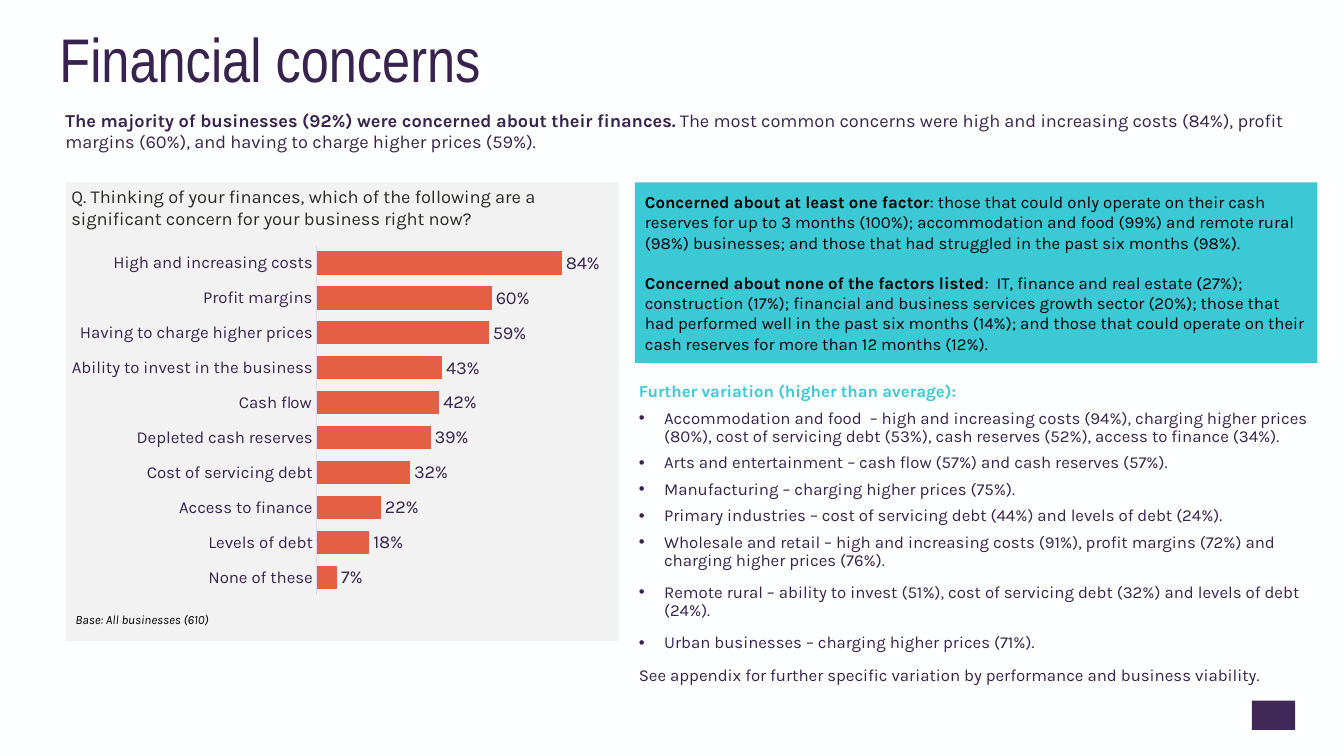
from lxml import etree
from pptx import Presentation
from pptx.chart.data import CategoryChartData
from pptx.dml.color import RGBColor
from pptx.enum import chart as charts, shapes, text
from pptx.oxml import parse_xml
from pptx.oxml.ns import nsdecls, qn
from pptx.util import Pt

COLORS = {
    "background": "FEFFFF", "plum": "38234E", "marker": "402957",
    "panel": "F2F2F2", "question": "292926", "black": "000000",
    "teal": "3BC9D5", "bar": "E45F46", "axis": "E1D6ED",
}
TITLE = "Financial concerns"
SUMMARY = [
    ("The majority of businesses (92%) were concerned about their finances. ", True),
    ("The most common concerns were high and increasing costs (84%), profit margins (60%), "
     "and having to charge higher prices (59%).", False),
]
QUESTION = ("Q. Thinking of your finances, which of the following are a significant "
            "concern for your business right now?")
BASE = "Base: All businesses (610)"
CONCERNS = {
    "High and increasing costs": 0.84,
    "Profit margins": 0.60,
    "Having to charge higher prices": 0.59,
    "Ability to invest in the business": 0.43,
    "Cash flow": 0.42,
    "Depleted cash reserves": 0.39,
    "Cost of servicing debt": 0.32,
    "Access to finance": 0.22,
    "Levels of debt": 0.18,
    "None of these": 0.07,
}
CALLOUT = [
    [("Concerned about at least one factor", True),
     (": those that could only operate on their cash reserves for up to 3 months (100%); "
      "accommodation and food (99%) and remote rural (98%) businesses; and those that had "
      "struggled in the past six months (98%).", False)],
    [("Concerned about none of the factors listed", True),
     (":  IT, finance and real estate (27%); construction (17%); financial and business "
      "services growth sector (20%); those that had performed well in the past six months "
      "(14%); and those that could operate on their cash reserves for more than 12 months "
      "(12%).", False)],
]
VARIATION_HEADING = "Further variation (higher than average):"
VARIATIONS = [  # text, space before
    ("Accommodation and food  – high and increasing costs (94%), charging higher prices "
     "(80%), cost of servicing debt (53%), cash reserves (52%), access to finance (34%).", 6),
    ("Arts and entertainment – cash flow (57%) and cash reserves (57%).", 6),
    ("Manufacturing – charging higher prices (75%).", 6),
    ("Primary industries – cost of servicing debt (44%) and levels of debt (24%).", 6),
    ("Wholesale and retail – high and increasing costs (91%), profit margins (72%) and "
     "charging higher prices (76%).", 6),
    ("Remote rural – ability to invest (51%), cost of servicing debt (32%) and levels of "
     "debt (24%).", 10),
    ("Urban businesses – charging higher prices (71%).", 10),
]
APPENDIX = "See appendix for further specific variation by performance and business viability."

# left, top, width, height in points
TITLE_AREA = (35.3, 10.1, 828, 69.1)
SUMMARY_AREA = (39.6, 74.2, 913.7, 38.9)
PANEL_AREA = (46.8, 130.3, 395.3, 327.6)
QUESTION_AREA = (43.9, 135.4, 396, 25.2)
CHART_AREA = (50.4, 175, 378, 260)
BASE_AREA = (46.8, 434.9, 337, 15.1)
CALLOUT_AREA = (453.6, 130.3, 487.4, 128.9)
VARIATION_AREA = (449.3, 270, 504, 258.5)
MARKER_AREA = (894.2, 500.4, 31, 20.9)
PLOT_LAYOUT = {"x": 0.467, "y": 0, "w": 0.498, "h": 0.961}


def color(name):
    return RGBColor.from_string(COLORS[name])


def set_font(font, size, color_name, face="Karla"):
    font.name = face
    font.size = Pt(size)
    font.color.rgb = color(color_name)


def add_rectangle(page, area, fill):
    box = page.shapes.add_shape(shapes.MSO_SHAPE.RECTANGLE, *map(Pt, area))
    box.shadow.inherit = False
    box.fill.solid()
    box.fill.fore_color.rgb = color(fill)
    box.line.fill.background()
    return box


def add_text_box(page, area, anchor=text.MSO_ANCHOR.TOP):
    frame = page.shapes.add_textbox(*map(Pt, area)).text_frame
    frame.word_wrap = True
    frame.vertical_anchor = anchor
    return frame


def write(frame, spans, size, color_name, before=0, spacing=None, bullet=False):
    """Fill the frame's empty first paragraph, or append one; spans are (text, bold)."""
    para = frame.paragraphs[0]
    if para.runs:
        para = frame.add_paragraph()
    para.alignment = text.PP_ALIGN.LEFT
    if before:
        para.space_before = Pt(before)
    if spacing:
        para.line_spacing = spacing
    if bullet:
        properties = para._p.get_or_add_pPr()
        properties.set("marL", str(Pt(18)))
        properties.set("indent", str(Pt(-18)))
        etree.SubElement(properties, qn("a:buFont")).set("typeface", "Arial")
        etree.SubElement(properties, qn("a:buChar")).set("char", "•")
    set_font(para.font, size, color_name)
    for words, bold in spans:
        span = para.add_run()
        span.text = words
        span.font.bold = bold
    return para


def add_concern_chart(page):
    data = CategoryChartData(number_format="0%")
    data.categories = list(CONCERNS)
    data.add_series("Series 1", list(CONCERNS.values()))
    chart = page.shapes.add_chart(
        charts.XL_CHART_TYPE.BAR_CLUSTERED, *map(Pt, CHART_AREA), data).chart
    chart.has_legend = False
    chart.has_title = False
    set_font(chart.font, 13, "plum", "Calibri")

    categories = chart.category_axis
    categories.reverse_order = True
    categories.major_tick_mark = charts.XL_TICK_MARK.NONE
    set_font(categories.tick_labels.font, 12, "plum")
    categories.format.line.color.rgb = color("axis")
    categories.format.line.width = Pt(0.75)
    values = chart.value_axis
    values.visible = False
    values.has_major_gridlines = False
    values.minimum_scale, values.maximum_scale = 0, 0.9

    plot = chart.plots[0]
    plot.gap_width = 50
    plot.vary_by_categories = False
    bars = plot.series[0].format.fill
    bars.solid()
    bars.fore_color.rgb = color("bar")
    plot.has_data_labels = True
    labels = plot.data_labels
    labels.show_value = True
    labels.position = charts.XL_LABEL_POSITION.OUTSIDE_END
    labels.number_format = "0%"
    labels.number_format_is_linked = False
    set_font(labels.font, 13, "plum")

    plot_area = chart._chartSpace.chart.plotArea
    for layout in plot_area.findall(qn("c:layout")):
        plot_area.remove(layout)
    modes = '<c:layoutTarget val="inner"/><c:xMode val="edge"/><c:yMode val="edge"/>'
    sizes = "".join(f'<c:{key} val="{part}"/>' for key, part in PLOT_LAYOUT.items())
    plot_area.insert(0, parse_xml(
        f'<c:layout {nsdecls("c")}><c:manualLayout>{modes}{sizes}</c:manualLayout></c:layout>'))


def main():
    deck = Presentation()
    deck.slide_width, deck.slide_height = Pt(960), Pt(540)
    page = deck.slides.add_slide(deck.slide_layouts[5])
    page.background.fill.solid()
    page.background.fill.fore_color.rgb = color("background")
    middle = text.MSO_ANCHOR.MIDDLE

    add_rectangle(page, MARKER_AREA, "marker")
    title = page.shapes.title
    title.left, title.top, title.width, title.height = map(Pt, TITLE_AREA)
    title.text_frame.text = TITLE
    title.text_frame.vertical_anchor = middle
    heading = title.text_frame.paragraphs[0]
    heading.alignment = text.PP_ALIGN.LEFT
    heading.line_spacing = 0.9
    set_font(heading.font, 44, "plum", "Arial Narrow")
    write(add_text_box(page, SUMMARY_AREA), SUMMARY, 13, "plum")

    add_rectangle(page, PANEL_AREA, "panel")
    write(add_text_box(page, QUESTION_AREA, middle), [(QUESTION, False)], 13, "question")
    add_concern_chart(page)
    base = write(add_text_box(page, BASE_AREA, middle), [(BASE, False)], 9, "black")
    base.font.italic = True

    callout = add_rectangle(page, CALLOUT_AREA, "teal").text_frame
    callout.word_wrap = True
    callout.vertical_anchor = middle
    for index, spans in enumerate(CALLOUT):
        write(callout, spans, 12, "black", before=14.5 * index)

    variation = add_text_box(page, VARIATION_AREA)
    write(variation, [(VARIATION_HEADING, True)], 12, "teal", spacing=0.9)
    for words, before in VARIATIONS:
        write(variation, [(words, False)], 12, "plum", before, 0.9, bullet=True)
    write(variation, [(APPENDIX, False)], 12, "plum", 10, 0.9)

    deck.save("out.pptx")


if __name__ == "__main__":
    main()
